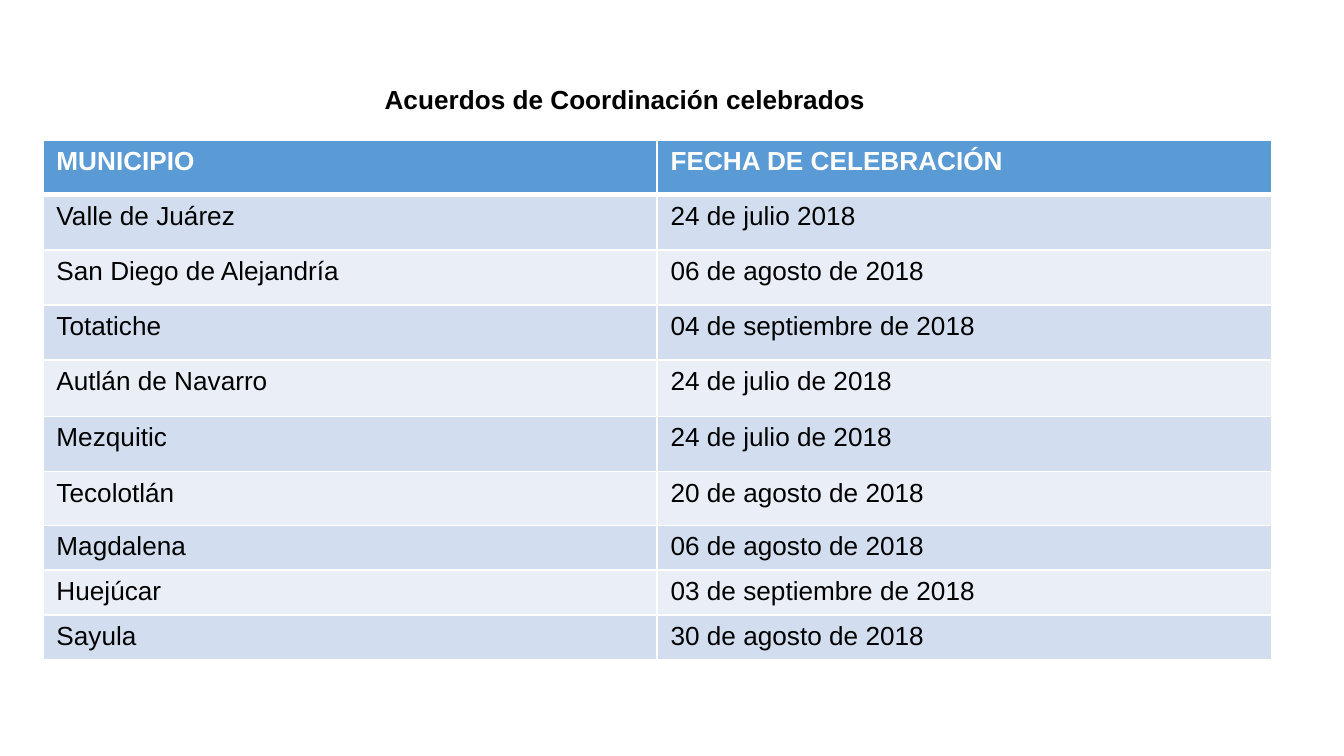
from dataclasses import dataclass

from lxml.etree import SubElement
from pptx import Presentation
from pptx.dml.color import RGBColor
from pptx.enum.text import MSO_ANCHOR, MSO_AUTO_SIZE, PP_ALIGN
from pptx.oxml.ns import qn
from pptx.util import Inches, Pt


@dataclass(frozen=True)
class Theme:
    """Colours, type and line widths of the slide."""
    font: str = "Arial"
    size: int = 14
    text: str = "000000"
    white: str = "FFFFFF"
    header: str = "5B9BD5"
    bands: tuple = ("D2DEEF", "EAEFF7")
    thin: int = 1
    thick: int = 3


THEME = Theme()
TITLE = "Acuerdos de Coordinación celebrados"
HEADER = ("MUNICIPIO", "FECHA DE CELEBRACIÓN")
AGREEMENTS = [
    ("Valle de Juárez", "24 de julio 2018"),
    ("San Diego de Alejandría", "06 de agosto de 2018"),
    ("Totatiche", "04 de septiembre de 2018"),
    ("Autlán de Navarro", "24 de julio de 2018"),
    ("Mezquitic", "24 de julio de 2018"),
    ("Tecolotlán", "20 de agosto de 2018"),
    ("Magdalena", "06 de agosto de 2018"),
    ("Huejúcar", "03 de septiembre de 2018"),
    ("Sayula", "30 de agosto de 2018"),
]
ROW_HEIGHTS = [0.41] * 4 + [0.42] + [0.41, 0.4] + [0.33] * 3
COLUMN_WIDTH = 4.57


def write_text(tf, text, color, bold):
    """Write one formatted run in a text frame."""
    p = tf.paragraphs[0]
    r = p.add_run()
    r.text = text
    for name, value in {"name": THEME.font, "size": Pt(THEME.size), "bold": bold}.items():
        setattr(r.font, name, value)
    r.font.color.rgb = RGBColor.from_string(color)
    return p


def add_title(s):
    """Place and format the title placeholder."""
    sp = s.shapes.title
    box = {"left": 2.22, "top": 0.57, "width": 4.86, "height": 0.34}
    for name, value in box.items():
        setattr(sp, name, Inches(value))
    tf = sp.text_frame
    frame = {"word_wrap": True, "auto_size": MSO_AUTO_SIZE.SHAPE_TO_FIT_TEXT,
             "vertical_anchor": MSO_ANCHOR.TOP}
    for name, value in frame.items():
        setattr(tf, name, value)
    p = write_text(tf, TITLE, THEME.text, True)
    p.alignment = PP_ALIGN.CENTER


def set_borders(cell, widths):
    """Draw white borders with the given width for each side."""
    tcPr = cell._tc.get_or_add_tcPr()
    for side, width in widths.items():
        ln = SubElement(tcPr, qn(f"a:ln{side}"), w=str(Pt(width)))
        fill = SubElement(ln, qn("a:solidFill"))
        SubElement(fill, qn("a:srgbClr"), val=THEME.white)


def fill_cell(cell, text, row):
    """Write and style a cell according to its row."""
    is_header = row == 0
    widths = dict.fromkeys("LRTB", THEME.thin)
    if row < 2:
        widths["B" if is_header else "T"] = THEME.thick
    set_borders(cell, widths)
    color = THEME.header if is_header else THEME.bands[(row - 1) % 2]
    cell.fill.solid()
    cell.fill.fore_color.rgb = RGBColor.from_string(color)
    write_text(cell.text_frame, text, THEME.white if is_header else THEME.text, is_header)


def add_agreements_table(s):
    """Add the table of municipalities and dates."""
    rows = [HEADER, *AGREEMENTS]
    table = s.shapes.add_table(
        len(rows), len(HEADER), Inches(0.32), Inches(1.04),
        Inches(COLUMN_WIDTH * len(HEADER)), Inches(sum(ROW_HEIGHTS))).table
    for column in table.columns:
        column.width = Inches(COLUMN_WIDTH)
    for i, (values, height) in enumerate(zip(rows, ROW_HEIGHTS)):
        table.rows[i].height = Inches(height)
        for j, text in enumerate(values):
            fill_cell(table.cell(i, j), text, i)


def main():
    """Build and save the slide."""
    prs = Presentation()
    prs.slide_width, prs.slide_height = Inches(10), Inches(10 * 9 / 16)
    s = prs.slides.add_slide(prs.slide_layouts.get_by_name("Title Only"))
    add_title(s)
    add_agreements_table(s)
    prs.save("out.pptx")


if __name__ == "__main__":
    main()
